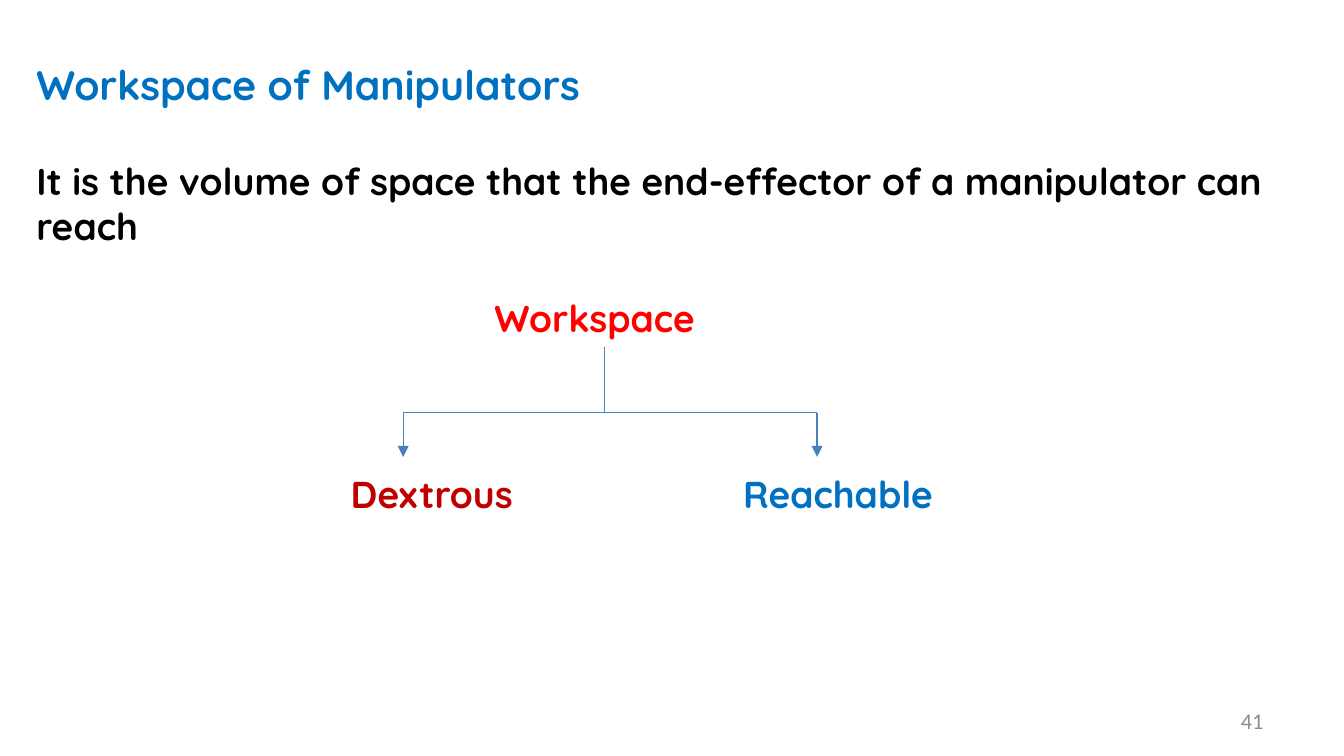
from dataclasses import dataclass

from lxml import etree
from pptx import Presentation
from pptx.dml.color import RGBColor
from pptx.enum import shapes, text
from pptx.oxml import ns
from pptx.util import Inches, Pt


@dataclass(frozen=True)
class Theme:
    font: str = "Quicksand"
    number_font: str = "Calibri"
    title_size: int = 22
    body_size: int = 20
    number_size: int = 12
    blue: str = "0070C0"
    black: str = "000000"
    red: str = "FF0000"
    dark_red: str = "C00000"
    grey: str = "8C8C8C"
    line: str = "4B7EBC"
    line_width: float = 0.75


THEME = Theme()


def place(shape, left, top, width, height):
    shape.left, shape.top = Inches(left), Inches(top)
    shape.width, shape.height = Inches(width), Inches(height)


def write(shape, words, color, size=THEME.body_size, font=THEME.font,
          bold=True, align=text.PP_ALIGN.LEFT, anchor=text.MSO_ANCHOR.TOP):
    frame = shape.text_frame
    frame.word_wrap = True
    frame.auto_size = text.MSO_AUTO_SIZE.NONE
    frame.vertical_anchor = anchor
    para = frame.paragraphs[0]
    para.text = words
    para.alignment = align
    para.space_before = Pt(0)
    para.font.name = font
    para.font.size = Pt(size)
    para.font.bold = bold
    para.font.color.rgb = RGBColor.from_string(color)


def remove_bullet(para):
    props = para._p.get_or_add_pPr()
    props.set("marL", "0")
    props.set("indent", "0")
    etree.SubElement(props, ns.qn("a:buNone"))


def add_label(page, words, color, left, top, width=1.82, height=0.44, **style):
    box = page.shapes.add_textbox(0, 0, 0, 0)
    place(box, left, top, width, height)
    write(box, words, color, **style)


def add_line(page, start, end, arrow=False):
    line = page.shapes.add_connector(
        shapes.MSO_CONNECTOR.STRAIGHT, *map(Inches, (*start, *end)))
    line.line.color.rgb = RGBColor.from_string(THEME.line)
    line.line.width = Pt(THEME.line_width)
    if arrow:
        etree.SubElement(line.line._get_or_add_ln(), ns.qn("a:tailEnd"), type="triangle")
    etree.SubElement(line._element.spPr, ns.qn("a:effectLst"))


def add_headings(page):
    title, body = page.shapes.title, page.placeholders[1]
    place(title, 0.17, 0.39, 9.58, 0.5)
    write(title, "Workspace of Manipulators", THEME.blue, size=THEME.title_size)
    place(body, 0.17, 1.13, 9.58, 0.8)
    remove_bullet(body.text_frame.paragraphs[0])
    write(body, "It is the volume of space that the end-effector of a "
                "manipulator can reach", THEME.black)


def add_workspace_tree(page):
    trunk_x, branch_xs = 4.5, (3, 6.08)
    trunk_y, branch_y, tip_y = 2.58, 3.07, 3.4
    add_label(page, "Workspace", THEME.red, 3.58, 2.15)
    add_label(page, "Dextrous", THEME.dark_red, 2.51, 3.46)
    add_label(page, "Reachable", THEME.blue, 5.43, 3.46)
    add_line(page, (branch_xs[0], branch_y), (branch_xs[1], branch_y))
    for x in branch_xs:
        add_line(page, (x, branch_y), (x, tip_y), arrow=True)
    add_line(page, (trunk_x, trunk_y), (trunk_x, branch_y))


def main():
    deck = Presentation()
    deck.slide_width = Inches(10)
    deck.slide_height = deck.slide_width * 9 // 16
    page = deck.slides.add_slide(deck.slide_layouts[1])
    add_headings(page)
    add_workspace_tree(page)
    add_label(page, "41", THEME.grey, 7.17, 5.21, 2.33, 0.3,
              size=THEME.number_size, font=THEME.number_font, bold=False,
              align=text.PP_ALIGN.RIGHT, anchor=text.MSO_ANCHOR.MIDDLE)
    deck.save("out.pptx")


if __name__ == "__main__":
    main()
